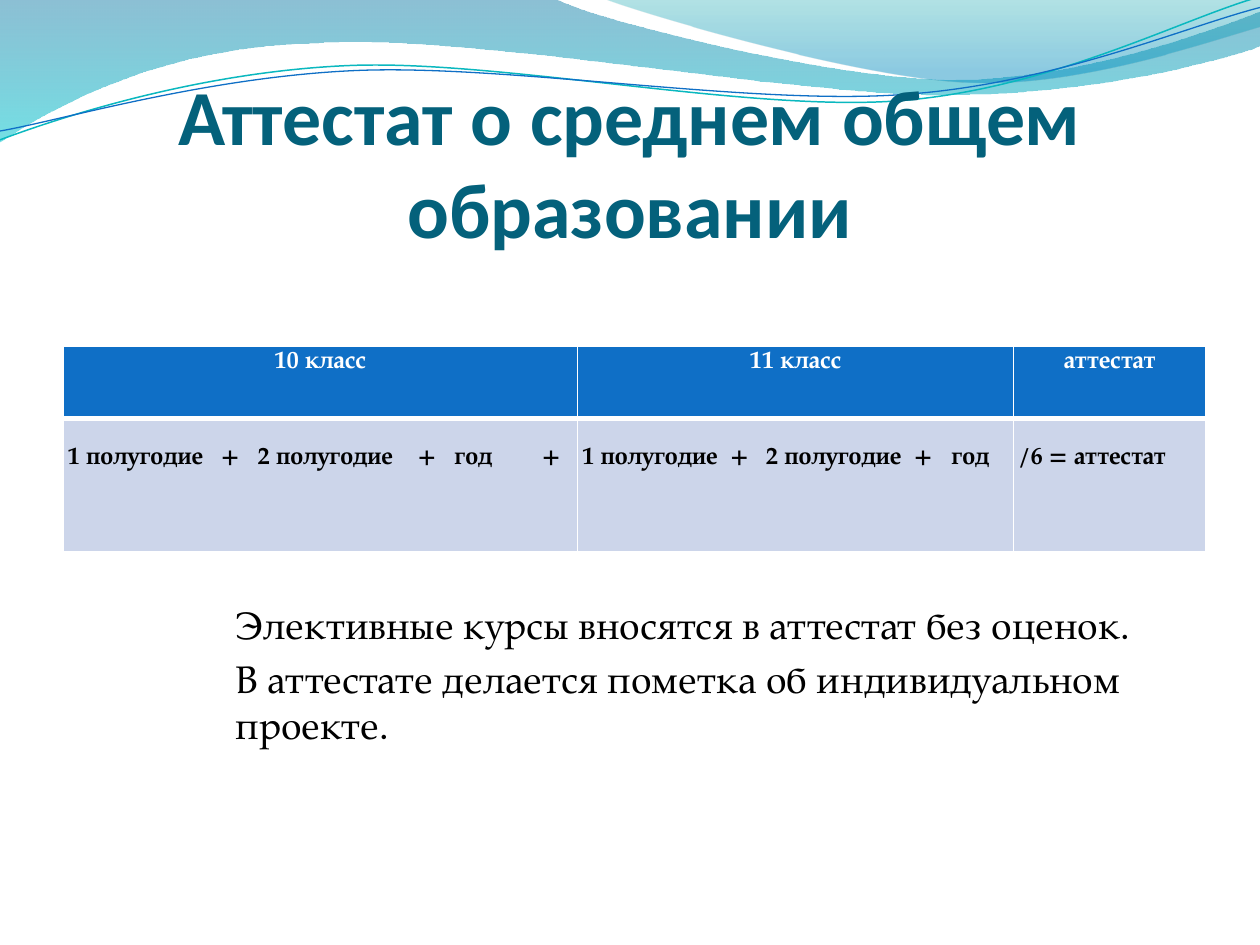
from math import cos, radians, sin
from pptx import Presentation
from pptx.dml.color import RGBColor
from pptx.enum.text import MSO_ANCHOR, PP_ALIGN
from pptx.oxml.ns import qn
from pptx.util import Pt
from lxml.etree import SubElement

SERIF = "TeX Gyre Pagella"
LINE_ROTATION = 357.3

UPPER_WAVE = [
    [(0, 0)], [(4.4, -0.01)],
    [(4.76, 0.17), (6.64, 0.63), (7.58, 0.63)],
    [(8.53, 0.63), (9.58, 0.26), (10, 0.09)],
    [(10.01, 0.36)],
    [(9.83, 0.44), (8.7, 0.76), (7.46, 0.75)],
    [(6.22, 0.75), (3.82, 0.28), (2.57, 0.34)],
    [(1.29, 0.36), (0.46, 0.83), (-0.01, 1.13)],
]
RIGHT_WAVE = [
    [(4.79, -0.01)],
    [(5.09, 0.11), (6.82, 0.62), (7.69, 0.65)],
    [(8.56, 0.69), (9.61, 0.32), (10, 0.21)],
    [(10, 0)],
]
TEAL_LINE = [
    [(0, 1.11)],
    [(0.48, 0.93), (1.58, 0.57), (2.77, 0.52)],
    [(3.95, 0.47), (5.93, 0.89), (7.13, 0.8)],
    [(8.33, 0.71), (9.38, 0.15), (9.98, -0.02)],
]
BLUE_LINE = [
    [(0, 1.04)],
    [(0.47, 0.96), (1.64, 0.61), (2.83, 0.56)],
    [(4.03, 0.51), (5.97, 0.84), (7.17, 0.75)],
    [(8.36, 0.67), (9.41, 0.21), (10, 0.06)],
]
COLUMNS = [
    ("10 класс", "1 полугодие\t+\t2 полугодие\t+\tгод\t+", 294, (87.5, 108.5, 200, 221, 271)),
    ("11 класс", "1 полугодие\t+\t2 полугодие\t+\tгод", 249.1, (84.5, 105, 189.5, 211)),
    ("аттестат", "/6 = аттестат", 109.7, ()),
]


def color(value):
    return RGBColor.from_string(value)


def style_text(paragraph, font_name, size, text_color, bold=False):
    font = paragraph.font
    font.name, font.size, font.bold = font_name, Pt(size), bold
    font.color.rgb = color(text_color)


def set_margins(area, left, top, right, bottom):
    area.margin_left, area.margin_top = Pt(left), Pt(top)
    area.margin_right, area.margin_bottom = Pt(right), Pt(bottom)


def turn_back(segments, center_x, center_y):
    angle = radians(-LINE_ROTATION)
    return [
        [(center_x + (x - center_x) * cos(angle) - (y - center_y) * sin(angle),
          center_y + (x - center_x) * sin(angle) + (y - center_y) * cos(angle))
         for x, y in segment]
        for segment in segments
    ]


def add_curve(slide, left, top, segments, closed):
    points = [(Pt(left + 72 * x), Pt(top + 72 * y)) for segment in segments for x, y in segment]
    builder = slide.shapes.build_freeform(*points[0])
    builder.add_line_segments(points[1:], close=closed)
    curve = builder.convert_to_shape()
    curve.shadow.inherit = False
    outline = next(curve._element.iter(qn("a:path")))
    steps = iter(outline.findall(qn("a:lnTo")))
    for segment in segments[1:]:
        bend = next(steps)
        if len(segment) == 3:
            bend.tag = qn("a:cubicBezTo")
            for extra in (next(steps), next(steps)):
                bend.append(extra[0])
                outline.remove(extra)
    return curve


def add_wave(slide, left, top, segments, stops):
    wave = add_curve(slide, left, top, segments, True)
    wave.line.fill.background()
    wave.fill.gradient()
    wave.fill.gradient_angle = 270
    for stop, (position, stop_color, _) in zip(wave.fill.gradient_stops, stops):
        stop.position = position
        stop.color.rgb = color(stop_color)
    for tint, (_, _, opacity) in zip(wave._element.spPr.iter(qn("a:srgbClr")), stops):
        SubElement(tint, qn("a:alpha"), val=str(opacity * 1000))


def add_wave_line(slide, left, top, segments, center, line_color, width):
    wave_line = add_curve(slide, left, top, turn_back(segments, *center), False)
    wave_line.rotation = LINE_ROTATION
    wave_line.fill.background()
    wave_line.line.color.rgb = color(line_color)
    wave_line.line.width = Pt(width)


def add_header_waves(slide, left, top):
    add_wave(slide, left, top, UPPER_WAVE, [(0, "0074A1", 45), (1, "00C6CF", 55)])
    add_wave(slide, left, top, RIGHT_WAVE, [(0, "00A1A9", 30), (0.8, "008BBF", 45)])
    add_wave_line(slide, left, top, TEAL_LINE, (4.99, 0.58), "0AB8BF", 0.85)
    add_wave_line(slide, left, top, BLUE_LINE, (5, 0.59), "0F6FC6", 0.75)


def add_title(slide, left, top, width, height):
    frame = slide.shapes.add_textbox(Pt(left), Pt(top), Pt(width), Pt(height)).text_frame
    frame.word_wrap = True
    frame.vertical_anchor = MSO_ANCHOR.BOTTOM
    set_margins(frame, 0, 3.6, 0, 0)
    title = frame.paragraphs[0]
    title.text = "Аттестат о среднем общем образовании"
    title.alignment = PP_ALIGN.CENTER
    style_text(title, "Calibri", 44.5, "04617B", True)


def set_borders(cell, widths):
    properties = cell._tc.get_or_add_tcPr()
    for index, (side, width) in enumerate(widths.items()):
        border = SubElement(properties, qn(f"a:ln{side}"), w=str(Pt(width)))
        fill = SubElement(border, qn("a:solidFill"))
        SubElement(fill, qn("a:srgbClr"), val="FFFFFF")
        properties.insert(index, border)


def set_tab_stops(paragraph, stops):
    properties = paragraph._p.get_or_add_pPr()
    tabs = SubElement(properties, qn("a:tabLst"))
    for stop in stops:
        SubElement(tabs, qn("a:tab"), pos=str(Pt(stop)), algn="l")
    properties.insert(0, tabs)


def fill_cell(cell, text, fill_color, text_color, top_margin, top_border, bottom_border):
    cell.fill.solid()
    cell.fill.fore_color.rgb = color(fill_color)
    set_borders(cell, {"L": 1, "R": 1, "T": top_border, "B": bottom_border})
    set_margins(cell, 2.7, top_margin, 2.7, 2.7)
    paragraph = cell.text_frame.paragraphs[0]
    paragraph.text = text
    style_text(paragraph, SERIF, 14, text_color, True)
    return paragraph


def add_grades_table(slide, left, top, width, height):
    grades = slide.shapes.add_table(2, len(COLUMNS), Pt(left), Pt(top), Pt(width), Pt(height)).table
    header_height = 41
    grades.rows[0].height = Pt(header_height)
    grades.rows[1].height = Pt(height - header_height)
    for index, (heading, formula, column_width, stops) in enumerate(COLUMNS):
        grades.columns[index].width = Pt(column_width)
        header = fill_cell(grades.cell(0, index), heading, "0F6FC6", "FFFFFF", 2.5, 1, 3)
        header.alignment = PP_ALIGN.CENTER
        terms = fill_cell(grades.cell(1, index), formula, "CCD5EA", "000000", 16.5, 3, 1)
        if stops:
            set_tab_stops(terms, stops)


def add_notice(slide, left, top, width, height):
    frame = slide.shapes.add_textbox(Pt(left), Pt(top), Pt(width), Pt(height)).text_frame
    frame.word_wrap = True
    set_margins(frame, 7.2, 0, 7.2, 3.6)
    frame.text = (
        "Элективные курсы вносятся в аттестат без оценок.\n"
        "В аттестате делается пометка об индивидуальном проекте."
    )
    for paragraph in frame.paragraphs:
        paragraph.space_before = Pt(4.4)
        style_text(paragraph, SERIF, 22, "000000")


def main():
    presentation = Presentation()
    presentation.slide_width, presentation.slide_height = Pt(720), Pt(540)
    slide = presentation.slides.add_slide(presentation.slide_layouts[6])
    add_header_waves(slide, 0, 0)
    add_title(slide, 36, 55.2, 648, 90)
    add_grades_table(slide, 36, 198, 652.8, 117.4)
    add_notice(slide, 127.5, 343.5, 556.5, 119)
    presentation.save("out.pptx")


if __name__ == "__main__":
    main()
